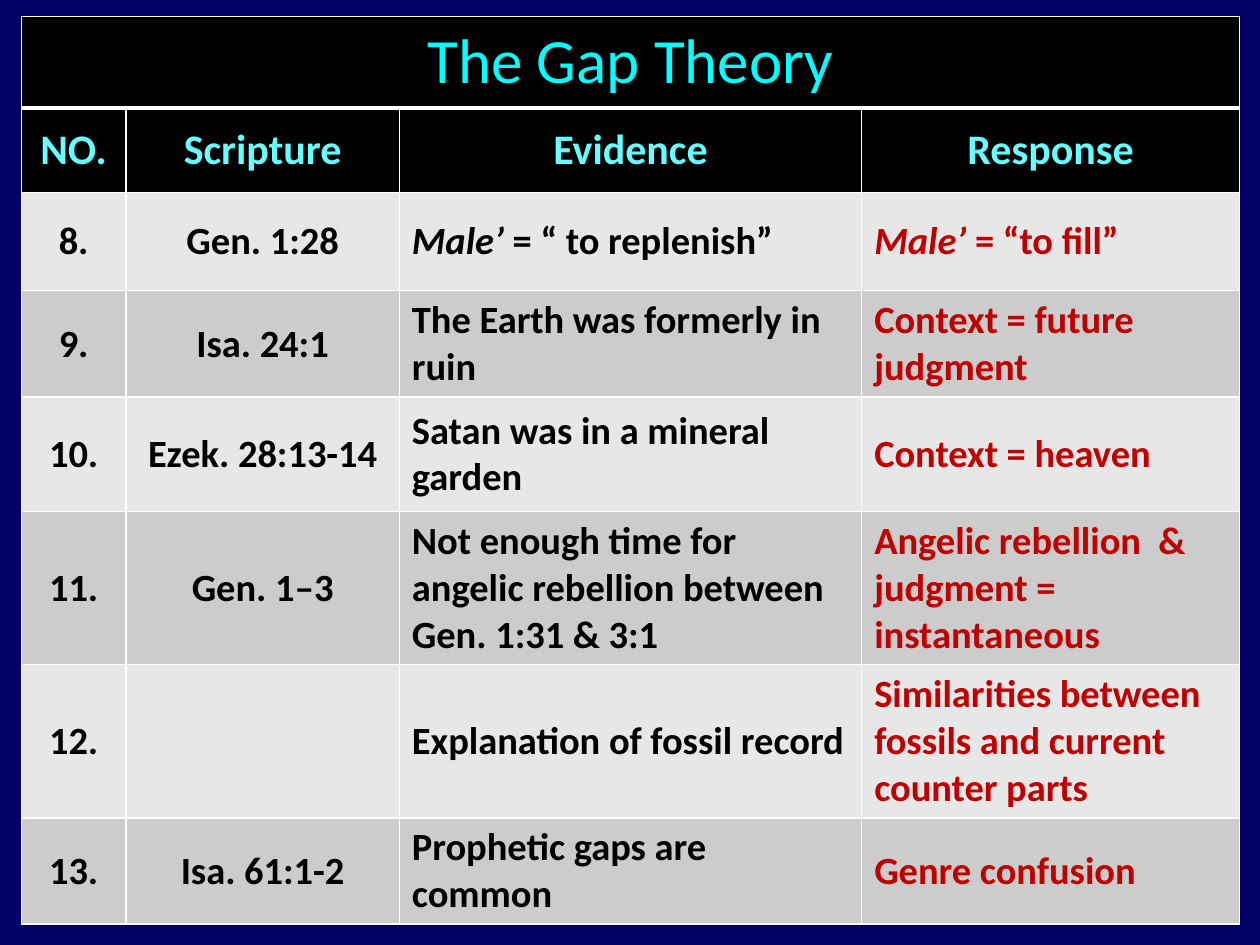
from dataclasses import dataclass

from lxml import etree
from pptx import Presentation
from pptx.dml.color import RGBColor
from pptx.enum.text import MSO_ANCHOR, PP_ALIGN
from pptx.oxml.ns import qn
from pptx.util import Cm, Pt

MIDDLE = MSO_ANCHOR.MIDDLE
CENTER, LEFT = PP_ALIGN.CENTER, PP_ALIGN.LEFT
BLANK_LAYOUT = 6


@dataclass(frozen=True)
class Theme:
    font: str = "Calibri"
    background: str = "000066"
    heading_fill: str = "000000"
    bands: tuple = ("E7E7E7", "CCCCCC")
    title: str = "00FFFF"
    heading: str = "66FFFF"
    body: str = "000000"
    response: str = "C00000"
    rule: str = "FFFFFF"
    title_size: int = 36
    heading_size: int = 24
    body_size: int = 22
    thin: int = 1
    thick: int = 3


THEME = Theme()

TITLE = "The Gap Theory"
HEADINGS = ("NO.", "Scripture", "Evidence", "Response")
# A tuple holds an italic term followed by upright text
ARGUMENTS = (
    ("8.", "Gen. 1:28", ("Male’", " = “ to replenish”"), ("Male’", " = “to fill”")),
    ("9.", "Isa. 24:1", "The Earth was formerly in ruin", "Context = future judgment"),
    ("10.", "Ezek. 28:13-14", "Satan was in a mineral garden", "Context = heaven"),
    ("11.", "Gen. 1‒3",
     "Not enough time for angelic rebellion between Gen. 1:31 & 3:1",
     "Angelic rebellion  & judgment = instantaneous"),
    ("12.", "", "Explanation of fossil record",
     "Similarities between fossils and current counter parts"),
    ("13.", "Isa. 61:1-2", "Prophetic gaps are common", "Genre confusion"),
)
COLUMN_WIDTHS = (2.11, 5.51, 9.32, 7.62)
ROW_HEIGHTS = (1.85, 1.7, 1.98, 1.98, 2.31, 2.84, 2.84, 1.98)


def rule_cell(cell, top, bottom):
    """Draw the four borders of a cell; widths are in points."""
    properties = cell._tc.get_or_add_tcPr()
    sides = (("a:lnL", THEME.thin), ("a:lnR", THEME.thin),
             ("a:lnT", top), ("a:lnB", bottom))
    for side, width in sides:
        line = etree.SubElement(properties, qn(side), w=str(Pt(width)))
        fill = etree.SubElement(line, qn("a:solidFill"))
        etree.SubElement(fill, qn("a:srgbClr"), val=THEME.rule)


def fill_cell(cell, fill, content, size, color, align=CENTER, bold=True,
              top=THEME.thin, bottom=THEME.thin):
    rule_cell(cell, top, bottom)
    cell.fill.solid()
    cell.fill.fore_color.rgb = RGBColor.from_string(fill)
    cell.vertical_anchor = MIDDLE
    paragraph = cell.text_frame.paragraphs[0]
    paragraph.alignment = align
    has_term = isinstance(content, tuple)
    pieces = content if has_term else (content,)
    for index, piece in enumerate(pieces):
        if not piece:
            continue
        run = paragraph.add_run()
        run.text = piece
        run.font.name = THEME.font
        run.font.size = Pt(size)
        run.font.bold = bold
        run.font.italic = has_term and index == 0
        run.font.color.rgb = RGBColor.from_string(color)


def add_argument_table(slide, left, top):
    table = slide.shapes.add_table(
        len(ROW_HEIGHTS), len(COLUMN_WIDTHS), Cm(left), Cm(top),
        Cm(sum(COLUMN_WIDTHS)), Cm(sum(ROW_HEIGHTS))).table
    for column, width in zip(table.columns, COLUMN_WIDTHS):
        column.width = Cm(width)
    for row, height in zip(table.rows, ROW_HEIGHTS):
        row.height = Cm(height)

    # Title across all columns
    table.cell(0, 0).merge(table.cell(0, len(COLUMN_WIDTHS) - 1))
    for column in range(len(COLUMN_WIDTHS)):
        fill_cell(table.cell(0, column), THEME.heading_fill,
                  TITLE if column == 0 else "", THEME.title_size, THEME.title,
                  bold=False, bottom=THEME.thick)

    # Column headings
    for column, heading in enumerate(HEADINGS):
        fill_cell(table.cell(1, column), THEME.heading_fill, heading,
                  THEME.heading_size, THEME.heading, top=THEME.thick)

    # Arguments in alternating bands
    aligns = (CENTER, CENTER, LEFT, LEFT)
    colors = (THEME.body, THEME.body, THEME.body, THEME.response)
    for index, argument in enumerate(ARGUMENTS):
        band = THEME.bands[index % len(THEME.bands)]
        for column, content in enumerate(argument):
            fill_cell(table.cell(index + 2, column), band, content,
                      THEME.body_size, colors[column], aligns[column])


def main():
    prs = Presentation()
    prs.slide_width, prs.slide_height = Cm(25.4), Cm(19.05)
    slide = prs.slides.add_slide(prs.slide_layouts[BLANK_LAYOUT])
    slide.background.fill.solid()
    slide.background.fill.fore_color.rgb = RGBColor.from_string(THEME.background)
    add_argument_table(slide, left=0.43, top=0.33)
    prs.save("out.pptx")


if __name__ == "__main__":
    main()
